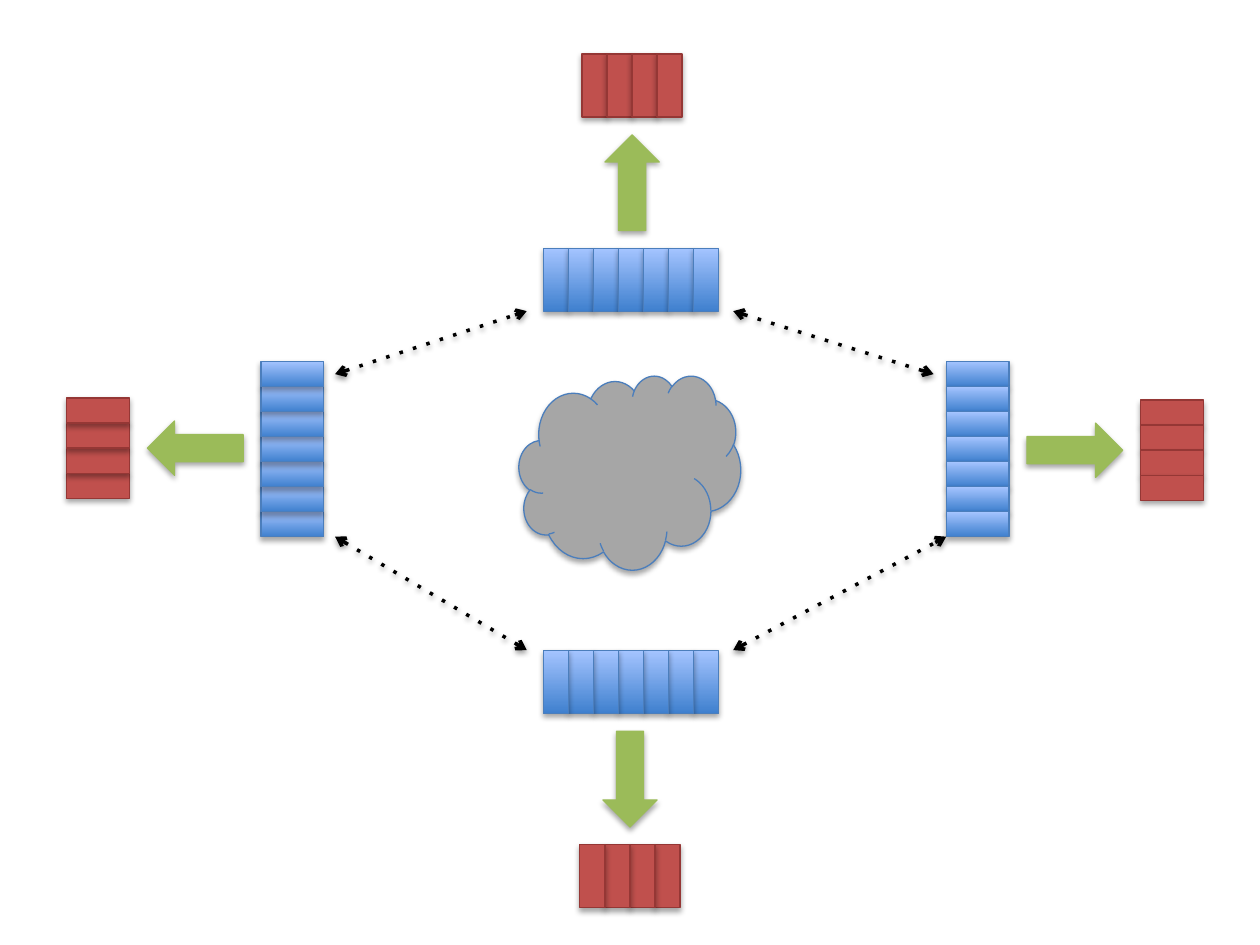
import math

import pptx
import pptx.dml.color
import pptx.enum.dml
import pptx.enum.shapes
import pptx.oxml
import pptx.oxml.ns
import pptx.util

Pt = pptx.util.Pt
SHAPE = pptx.enum.shapes.MSO_SHAPE
NS = pptx.oxml.ns.nsdecls("a")

CELL_LONG, CELL_SHORT, CELL_PITCH = 36, 14.4, 14.3
ARROW_W, ARROW_H = 54.7, 31
NODE_LONG, NODE_SHORT = 147, 100.4
LEAN = 0.6  # sideways shift of the arrow and the red queue


def rgb(value):
    return pptx.dml.color.RGBColor.from_string(value)


def add_shadow(sp, alpha=35, dist=1.8):
    sp._element.spPr.append(pptx.oxml.parse_xml(
        f'<a:effectLst {NS}><a:outerShdw blurRad="{Pt(3.15)}" dist="{Pt(dist)}" '
        f'dir="5400000" rotWithShape="0"><a:srgbClr val="000000">'
        f'<a:alpha val="{alpha * 1000}"/></a:srgbClr></a:outerShdw></a:effectLst>'))


def add_block(shapes, kind, box, fill, line):
    """Add a shape; a pair of fill colours makes a bottom-to-top gradient."""
    sp = shapes.add_shape(kind, *(Pt(v) for v in box))
    if isinstance(fill, tuple):
        sp.fill.gradient()
        sp.fill.gradient_angle = 90
        for stop, color in zip(sp.fill.gradient_stops, fill):
            stop.color.rgb = rgb(color)
    else:
        sp.fill.solid()
        sp.fill.fore_color.rgb = rgb(fill)
    sp.line.color.rgb = rgb(line)
    sp.line.width = Pt(0.75)
    add_shadow(sp)
    return sp


def add_node(slide, box, angle):
    """Blue queue, arrow and red queue, running outwards at the given angle."""
    left, top, width, height = box
    dx, dy = (round(f(math.radians(angle))) for f in (math.cos, math.sin))
    shapes = slide.shapes.add_group_shape().shapes

    def centre(along, across):
        return (left + width / 2 + along * dx - across * dy,
                top + height / 2 + along * dy + across * dx)

    # Arrow
    x, y = centre(0, LEAN)
    arrow = add_block(shapes, SHAPE.RIGHT_ARROW,
                      (x - ARROW_W / 2, y - ARROW_H / 2, ARROW_W, ARROW_H),
                      "9BBB59", "9BBB59")
    arrow.rotation = angle

    # Queues
    w, h = (CELL_LONG, CELL_SHORT) if dx else (CELL_SHORT, CELL_LONG)
    reach = (NODE_LONG - CELL_LONG) / 2
    for count, along, shift, fill, line in (
            (7, -reach, 0, ("3F80CE", "A4C4FF"), "4B7EBC"),
            (4, reach, LEAN, "C0504D", "953735")):
        for i in range(count):
            x, y = centre(along, shift + (i - (count - 1) / 2) * CELL_PITCH)
            add_block(shapes, SHAPE.RECTANGLE, (x - w / 2, y - h / 2, w, h), fill, line)


def add_cloud(slide, box):
    add_block(slide.shapes, SHAPE.CLOUD, box, "A6A6A6", "4B7EBC")


def add_link(slide, start, end):
    """Dotted line with an arrowhead at both ends."""
    c = slide.shapes.add_connector(pptx.enum.shapes.MSO_CONNECTOR.STRAIGHT,
                                   *(Pt(v) for v in start + end))
    c.line.color.rgb = rgb("000000")
    c.line.width = Pt(2)
    c.line.dash_style = pptx.enum.dml.MSO_LINE.ROUND_DOT
    ln = c.line._get_or_add_ln()
    ln.find(pptx.oxml.ns.qn("a:prstDash")).set("val", "dot")
    for end_name in ("headEnd", "tailEnd"):
        ln.append(pptx.oxml.parse_xml(f'<a:{end_name} {NS} type="arrow"/>'))
    add_shadow(c, alpha=38, dist=1.6)


def main():
    prs = pptx.Presentation()
    prs.slide_width, prs.slide_height = Pt(720), Pt(540)
    slide = prs.slides.add_slide(prs.slide_layouts[6])

    # Four nodes: right, bottom, top, left
    add_node(slide, (540.7, 206.5, NODE_LONG, NODE_SHORT), 0)
    add_node(slide, (310.4, 371.8, NODE_SHORT, NODE_LONG), 90)
    add_node(slide, (310.4, 30.9, NODE_SHORT, NODE_LONG), 270)
    add_node(slide, (38.1, 206.5, NODE_LONG, NODE_SHORT), 180)

    # Network in the middle
    add_cloud(slide, (296.6, 214.6, 126.7, 110.9))

    # Links between neighbouring nodes
    for start, end in (((191.5, 213.8), (301, 177.8)),
                       ((191.5, 306.7), (301, 371.5)),
                       ((419, 177.8), (533.5, 213.8)),
                       ((419, 371.5), (540.7, 306.7))):
        add_link(slide, start, end)

    prs.save("out.pptx")


if __name__ == "__main__":
    main()
